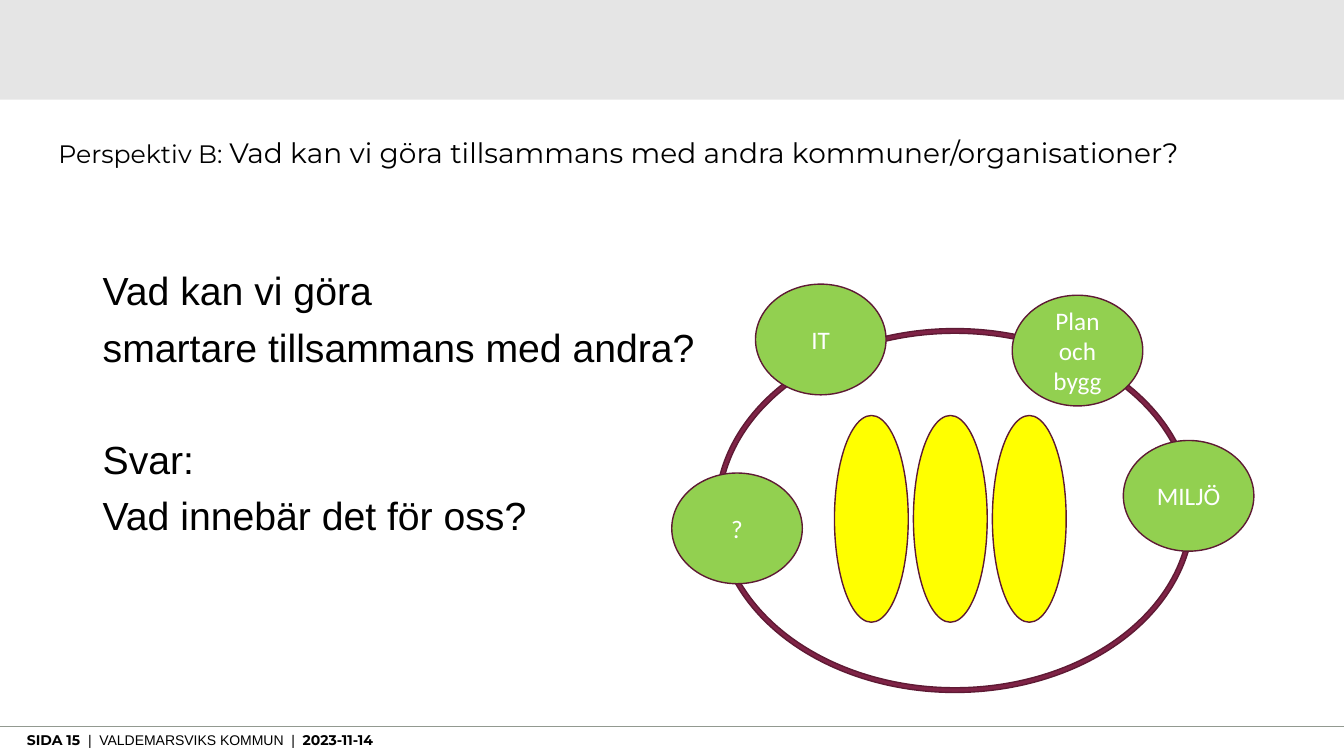
from dataclasses import dataclass
from lxml import etree
from pptx import Presentation
from pptx.dml.color import RGBColor
from pptx.enum.shapes import MSO_CONNECTOR, MSO_SHAPE
from pptx.enum.text import MSO_ANCHOR, PP_ALIGN
from pptx.oxml.ns import qn
from pptx.util import Cm, Pt

RECT, OVAL, DONUT = MSO_SHAPE.RECTANGLE, MSO_SHAPE.OVAL, MSO_SHAPE.DONUT
STRAIGHT = MSO_CONNECTOR.STRAIGHT
MIDDLE, CENTER = MSO_ANCHOR.MIDDLE, PP_ALIGN.CENTER


@dataclass(frozen=True)
class Theme:
    band: RGBColor = RGBColor(0xE5, 0xE5, 0xE5)
    rule: RGBColor = RGBColor(0x92, 0x99, 0x90)
    ink: RGBColor = RGBColor(0, 0, 0)
    white: RGBColor = RGBColor(255, 255, 255)
    plum: RGBColor = RGBColor(0x7F, 0x23, 0x46)
    edge: RGBColor = RGBColor(0x5E, 0x1A, 0x34)
    green: RGBColor = RGBColor(0x92, 0xD0, 0x50)
    yellow: RGBColor = RGBColor(255, 255, 0)
    head: str = "Montserrat"
    text: str = "Arial"
    label: str = "Calibri"
    foot: int = 10
    small: int = 18
    title: int = 20
    body: int = 28


theme = Theme()
deck = Presentation()
deck.slide_width, deck.slide_height = Cm(33.87), Cm(19.05)
slide = deck.slides.add_slide(deck.slide_layouts[6])
shapes = slide.shapes


def add_form(kind, left, top, width, height, fill, edge=None):
    form = shapes.add_shape(kind, Cm(left), Cm(top), Cm(width), Cm(height))
    form.shadow.inherit = False
    form.fill.solid()
    form.fill.fore_color.rgb = fill
    if edge is None:
        form.line.fill.background()
    else:
        form.line.color.rgb = edge
        form.line.width = Pt(1)
    return form


def add_run(para, text, size, font, color=theme.ink, bold=False):
    run = para.add_run()
    run.text = text
    run.font.size = Pt(size)
    run.font.name = font
    run.font.color.rgb = color
    run.font.bold = bold


add_form(RECT, 0, 0, 33.87, 2.51, theme.band)
rule = shapes.add_connector(STRAIGHT, 0, Cm(18.31), Cm(33.87), Cm(18.31))
rule.line.color.rgb = theme.rule
rule.line.width = Pt(0.5)
etree.SubElement(rule._element.spPr, qn("a:effectLst"))

foot = shapes.add_textbox(Cm(0.43), Cm(18.31), Cm(11.33), Cm(0.68)).text_frame
foot.word_wrap = True
for text, font, bold in (
    ("SIDA 15  ", theme.head, True),
    ("|  VALDEMARSVIKS KOMMUN  |  ", theme.text, False),
    ("2023-11-14", theme.head, True),
):
    add_run(foot.paragraphs[0], text, theme.foot, font, bold=bold)

title = shapes.add_textbox(Cm(1.22), Cm(3.38), Cm(32.16), Cm(2.49)).text_frame
title.word_wrap = True
para = title.paragraphs[0]
para.line_spacing = 0.9
add_run(para, "Perspektiv B: ", theme.small, theme.head)
add_run(para, "Vad kan vi göra tillsammans med andra kommuner/organisationer?",
        theme.title, theme.head)

body = shapes.add_textbox(Cm(2.34), Cm(6.73), Cm(29.21), Cm(10.41)).text_frame
body.word_wrap = True
for num, (text, gap) in enumerate((
    ("Vad kan vi göra", 0),
    ("smartare tillsammans med andra?", 10),
    ("Svar:", 50),
    ("Vad innebär det för oss?", 10),
)):
    para = body.add_paragraph() if num else body.paragraphs[0]
    para.line_spacing = 0.9
    para.space_before = Pt(gap)
    add_run(para, text, theme.body, theme.text)

for num in range(3):
    add_form(OVAL, 21.03 + 1.99 * num, 10.47, 1.86, 5.21, theme.yellow, theme.edge)

ring = add_form(DONUT, 18.03, 8.28, 12.07, 9.17, theme.plum, theme.edge)
ring.adjustments[0] = 0.013

for text, left, top in (
    ("IT", 19.04, 7.16),
    ("MILJÖ", 28.31, 11.1),
    ("Plan och bygg", 25.51, 7.44),
    ("?", 16.93, 11.92),
):
    node = add_form(OVAL, left, top, 3.29, 2.79, theme.green, theme.edge)
    frame = node.text_frame
    frame.word_wrap = True
    frame.vertical_anchor = MIDDLE
    para = frame.paragraphs[0]
    para.alignment = CENTER
    add_run(para, text, theme.small, theme.label, theme.white)

deck.save("out.pptx")
